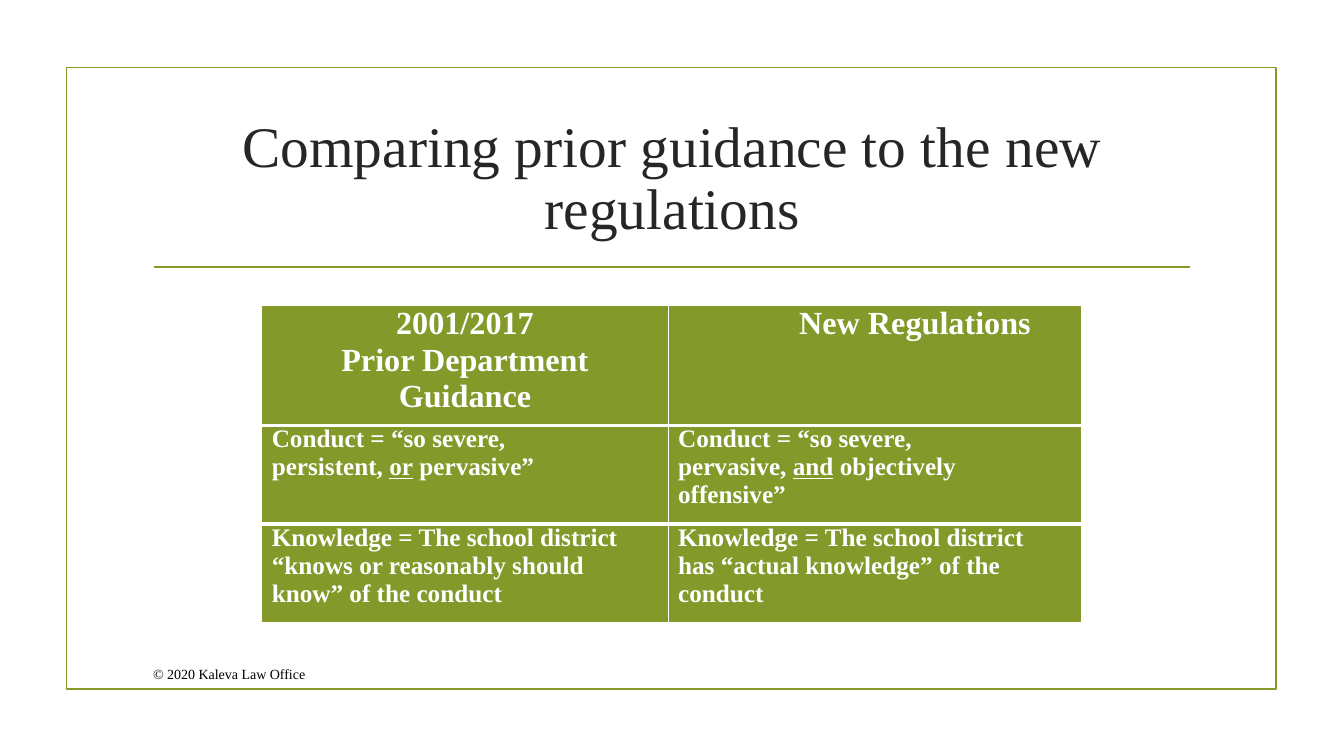
"""Slide comparing prior department guidance with the new regulations in a table."""
from lxml import etree
from pptx import Presentation
from pptx.dml.color import RGBColor
from pptx.enum.shapes import MSO_CONNECTOR, MSO_SHAPE
from pptx.enum.text import MSO_ANCHOR, PP_ALIGN
from pptx.oxml.ns import qn
from pptx.util import Cm, Pt

LEFT, CENTER = PP_ALIGN.LEFT, PP_ALIGN.CENTER
MIDDLE = MSO_ANCHOR.MIDDLE
RECT, STRAIGHT = MSO_SHAPE.RECTANGLE, MSO_CONNECTOR.STRAIGHT
COLORS = {"olive": "83992A", "white": "FFFFFF", "title": "262626", "black": "000000"}
FONT = "Times New Roman"


def add_run(p, text, color, **formats):
    """Add a run and set its font attributes."""
    r = p.add_run()
    r.text = text
    r.font.color.rgb = RGBColor.from_string(COLORS[color])
    for name, value in {"name": FONT, **formats}.items():
        setattr(r.font, name, value)


def add_border(cell, side, width):
    """Add a solid white border to one side of a cell."""
    ln = etree.SubElement(cell._tc.get_or_add_tcPr(), qn(f"a:ln{side}"), w=str(Pt(width)))
    fill = etree.SubElement(ln, qn("a:solidFill"))
    etree.SubElement(fill, qn("a:srgbClr"), val=COLORS["white"])


prs = Presentation()
prs.slide_width, prs.slide_height = Cm(33.87), Cm(19.05)
s = prs.slides.add_slide(prs.slide_layouts[6])
olive = RGBColor.from_string(COLORS["olive"])

frame = s.shapes.add_shape(RECT, Cm(1.68), Cm(1.7), Cm(30.48), Cm(15.67))
frame.shadow.inherit = False
frame.fill.background()
rule = s.shapes.add_connector(STRAIGHT, Cm(3.89), Cm(6.73), Cm(30), Cm(6.73))
etree.SubElement(rule._element.spPr, qn("a:effectLst"))
for sp in (frame, rule):
    sp.line.color.rgb = olive
    sp.line.width = Pt(1.25)

texts = [
    ("Comparing prior guidance to the new regulations", 2.72, 26.67, 3.63, 41, "title", CENTER, 0.9),
    ("© 2020 Kaleva Law Office", 16.59, 20.29, 0.79, 10, "black", LEFT, 1.0),
]
for text, top, width, height, size, color, align, spacing in texts:
    tf = s.shapes.add_textbox(Cm(3.61), Cm(top), Cm(width), Cm(height)).text_frame
    tf.word_wrap = True
    tf.vertical_anchor = MIDDLE
    p = tf.paragraphs[0]
    p.alignment = align
    p.line_spacing = spacing
    add_run(p, text, color, size=Pt(size))

col_widths, row_heights = [10.24, 10.41], [3.02, 2.48, 2.48]
table = s.shapes.add_table(3, 2, Cm(6.6), Cm(7.7), Cm(20.65), Cm(7.98)).table
table.first_row = table.horz_banding = False
for col, width in zip(table.columns, col_widths):
    col.width = Cm(width)
for row, height in zip(table.rows, row_heights):
    row.height = Cm(height)

rows = [
    [[["2001/2017"], ["Prior Department Guidance"]], [["New Regulations"]]],
    [[["Conduct = “so severe, persistent, ", "or", " pervasive”"]],
     [["Conduct = “so severe, pervasive, ", "and", " objectively offensive”"]]],
    [[["Knowledge = The school district “knows or reasonably should know” of the conduct"]],
     [["Knowledge = The school district has “actual knowledge” of the conduct"]]],
]
margins = [[(1.57, 1.57), (3.3, 0)], [(0.25, 2)] * 2, [(0.25, 1)] * 2]
for i, row in enumerate(rows):
    for j, paragraphs in enumerate(row):
        cell = table.cell(i, j)
        cell.margin_left, cell.margin_right = map(Cm, margins[i][j])
        cell.margin_top = cell.margin_bottom = Cm(0)
        for side, width in {"L": 1, "R": 1, "T": 3 if i else 1, "B": 3 if i < 2 else 1}.items():
            add_border(cell, side, width)
        cell.fill.solid()
        cell.fill.fore_color.rgb = olive
        tf = cell.text_frame
        for k, runs in enumerate(paragraphs):
            p = tf.add_paragraph() if k else tf.paragraphs[0]
            p.alignment = CENTER if (i, j) == (0, 0) else LEFT
            if k:
                p.space_before = Pt(1.3)
            for n, text in enumerate(runs):
                add_run(p, text, "white", size=Pt(18 if i else 23), bold=True, underline=n == 1)

prs.save("out.pptx")
